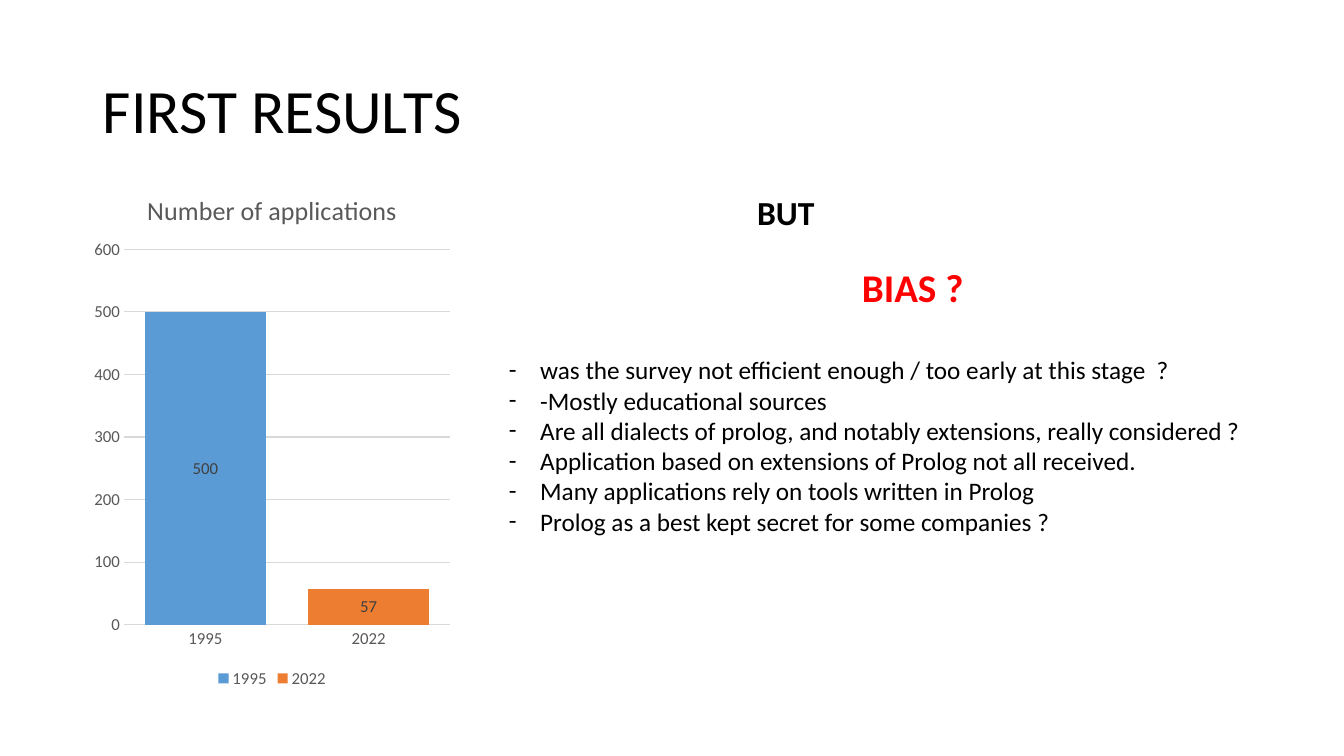
from lxml import etree
from pptx import Presentation
from pptx.chart.data import CategoryChartData
from pptx.dml.color import RGBColor
from pptx.enum.chart import XL_CHART_TYPE, XL_LABEL_POSITION, XL_LEGEND_POSITION, XL_TICK_MARK
from pptx.enum.text import MSO_ANCHOR, MSO_AUTO_SIZE, PP_ALIGN
from pptx.oxml import parse_xml
from pptx.oxml.ns import nsdecls, qn
from pptx.util import Inches, Pt

BLACK = RGBColor(0x00, 0x00, 0x00)
RED = RGBColor(0xFF, 0x00, 0x00)
AXIS_GRAY = RGBColor(0x59, 0x59, 0x59)
LABEL_GRAY = RGBColor(0x40, 0x40, 0x40)
GRID_GRAY = RGBColor(0xD9, 0xD9, 0xD9)
BLUE = RGBColor(0x5B, 0x9B, 0xD5)
ORANGE = RGBColor(0xED, 0x7D, 0x31)
FONT = "Calibri"


def set_font(font, size, color, bold=False):
    font.name = FONT
    font.size = Pt(size)
    font.color.rgb = color
    font.bold = bold


def write_text(shape, lines, size, color=BLACK, bold=False, wrap=True, bullet=None,
               spacing=None, anchor=MSO_ANCHOR.TOP, auto_size=MSO_AUTO_SIZE.SHAPE_TO_FIT_TEXT):
    frame = shape.text_frame
    frame.word_wrap = wrap
    frame.auto_size = auto_size
    frame.vertical_anchor = anchor
    frame.text = "\n".join(lines)
    for paragraph in frame.paragraphs:
        paragraph.alignment = PP_ALIGN.LEFT
        paragraph.line_spacing = spacing
        set_font(paragraph.runs[0].font, size, color, bold)
        if bullet:
            properties = paragraph._p.get_or_add_pPr()
            properties.set("marL", str(Inches(0.31)))
            properties.set("indent", str(Inches(-0.31)))
            etree.SubElement(properties, qn("a:buFont")).set("typeface", FONT)
            etree.SubElement(properties, qn("a:buChar")).set("char", bullet)


presentation = Presentation()
presentation.slide_width = Inches(13.33)
presentation.slide_height = Inches(7.5)
slide = presentation.slides.add_slide(presentation.slide_layouts[5])

title = slide.shapes.title
title.left, title.top = Inches(0.92), Inches(0.4)
title.width, title.height = Inches(11.5), Inches(1.45)
write_text(title, ["FIRST RESULTS"], 44, spacing=0.9,
           anchor=MSO_ANCHOR.MIDDLE, auto_size=MSO_AUTO_SIZE.NONE)

chart_data = CategoryChartData()
chart_data.categories = ["1995", "2022"]
chart_data.add_series("1995", [500, None])
chart_data.add_series("2022", [None, 57])
chart = slide.shapes.add_chart(
    XL_CHART_TYPE.COLUMN_STACKED,
    Inches(0.86), Inches(1.7), Inches(3.68), Inches(5.17), chart_data).chart
set_font(chart.font, 12, AXIS_GRAY)

chart.has_title = True
chart.chart_title.text_frame.text = "Number of applications"
set_font(chart.chart_title.text_frame.paragraphs[0].runs[0].font, 18.6, AXIS_GRAY)
chart.chart_title.include_in_layout = False

chart.has_legend = True
chart.legend.position = XL_LEGEND_POSITION.BOTTOM
chart.legend.include_in_layout = False
set_font(chart.legend.font, 12, AXIS_GRAY)

for axis in (chart.category_axis, chart.value_axis):
    axis.major_tick_mark = XL_TICK_MARK.NONE
    axis.minor_tick_mark = XL_TICK_MARK.NONE
    set_font(axis.tick_labels.font, 12, AXIS_GRAY)
chart.value_axis.minimum_scale = 0
chart.value_axis.maximum_scale = 600
chart.value_axis.major_unit = 100
chart.value_axis.format.line.fill.background()
for line in (chart.category_axis.format.line, chart.value_axis.major_gridlines.format.line):
    line.color.rgb = GRID_GRAY
    line.width = Pt(0.75)

plot = chart.plots[0]
plot.gap_width = 35
plot.overlap = 100
plot.vary_by_categories = False
for series, color in zip(plot.series, (BLUE, ORANGE)):
    series.format.fill.solid()
    series.format.fill.fore_color.rgb = color
    labels = series.data_labels
    labels.show_value = True
    labels.position = XL_LABEL_POSITION.CENTER
    set_font(labels.font, 12, LABEL_GRAY)

plot_area = chart._chartSpace.chart.plotArea
for layout in plot_area.findall(qn("c:layout")):
    plot_area.remove(layout)
plot_area.insert(0, parse_xml(
    f'<c:layout {nsdecls("c")}><c:manualLayout><c:layoutTarget val="inner"/>'
    '<c:xMode val="edge"/><c:yMode val="edge"/>'
    '<c:x val="0.1"/><c:y val="0.15"/><c:w val="0.88"/><c:h val="0.72"/>'
    '</c:manualLayout></c:layout>'))

questions = [
    "was the survey not efficient enough / too early at this stage  ?",
    "-Mostly educational sources",
    "Are all dialects of prolog, and notably extensions, really considered ?",
    "Application based on extensions of Prolog not all received.",
    "Many applications rely on tools written in Prolog",
    "Prolog as a best kept secret for some companies ?",
]
text_boxes = [
    ((4.95, 3.47, 7.73, 1.92), questions, dict(size=18, bullet="-")),
    ((7.41, 1.85, 0.78, 0.5), ["BUT"], dict(size=24, bold=True, wrap=False)),
    ((8.45, 2.56, 1.22, 0.57), ["BIAS ?"], dict(size=28, color=RED, bold=True, wrap=False)),
]
for box, lines, text_format in text_boxes:
    shape = slide.shapes.add_textbox(*[Inches(length) for length in box])
    write_text(shape, lines, **text_format)

presentation.save("out.pptx")
